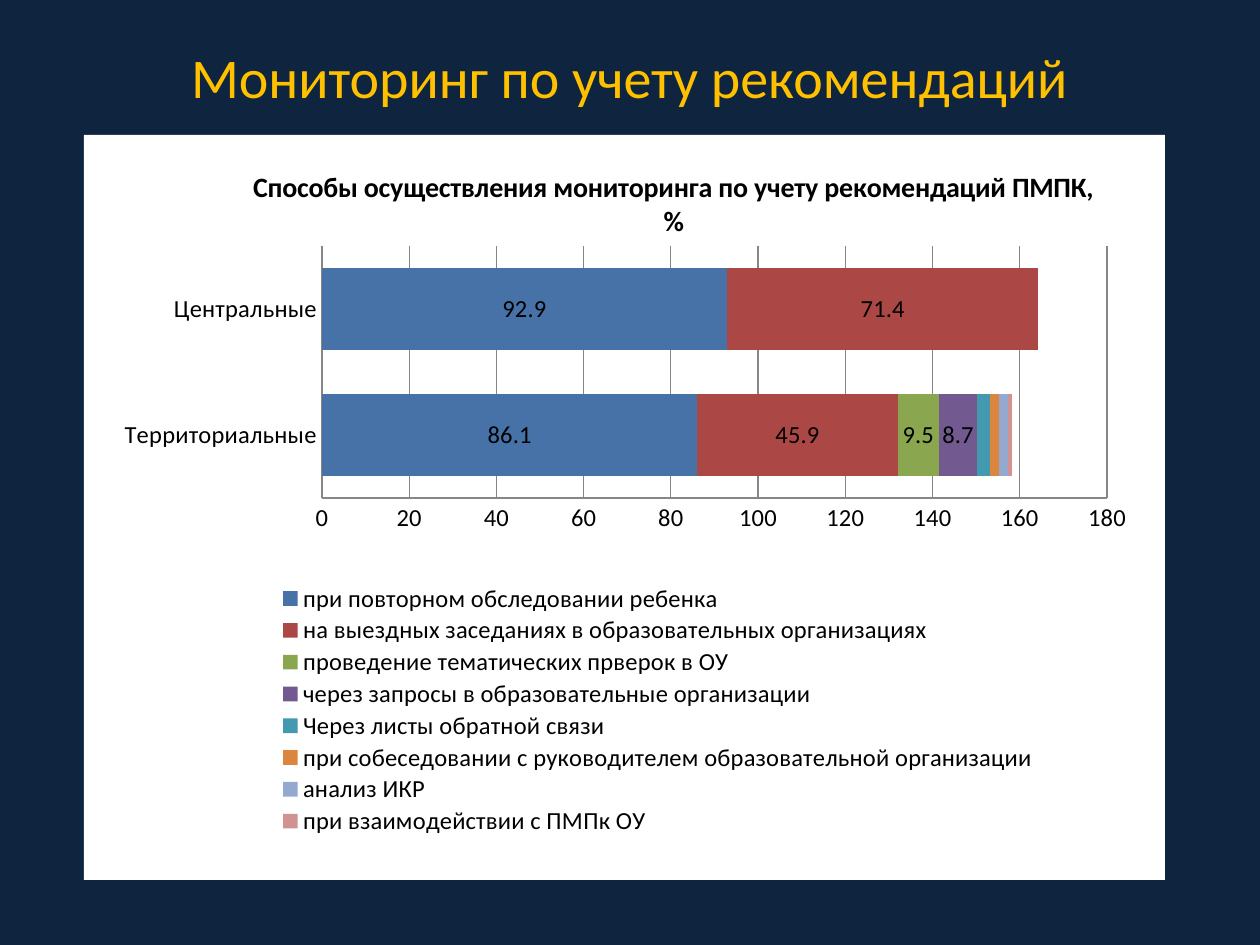
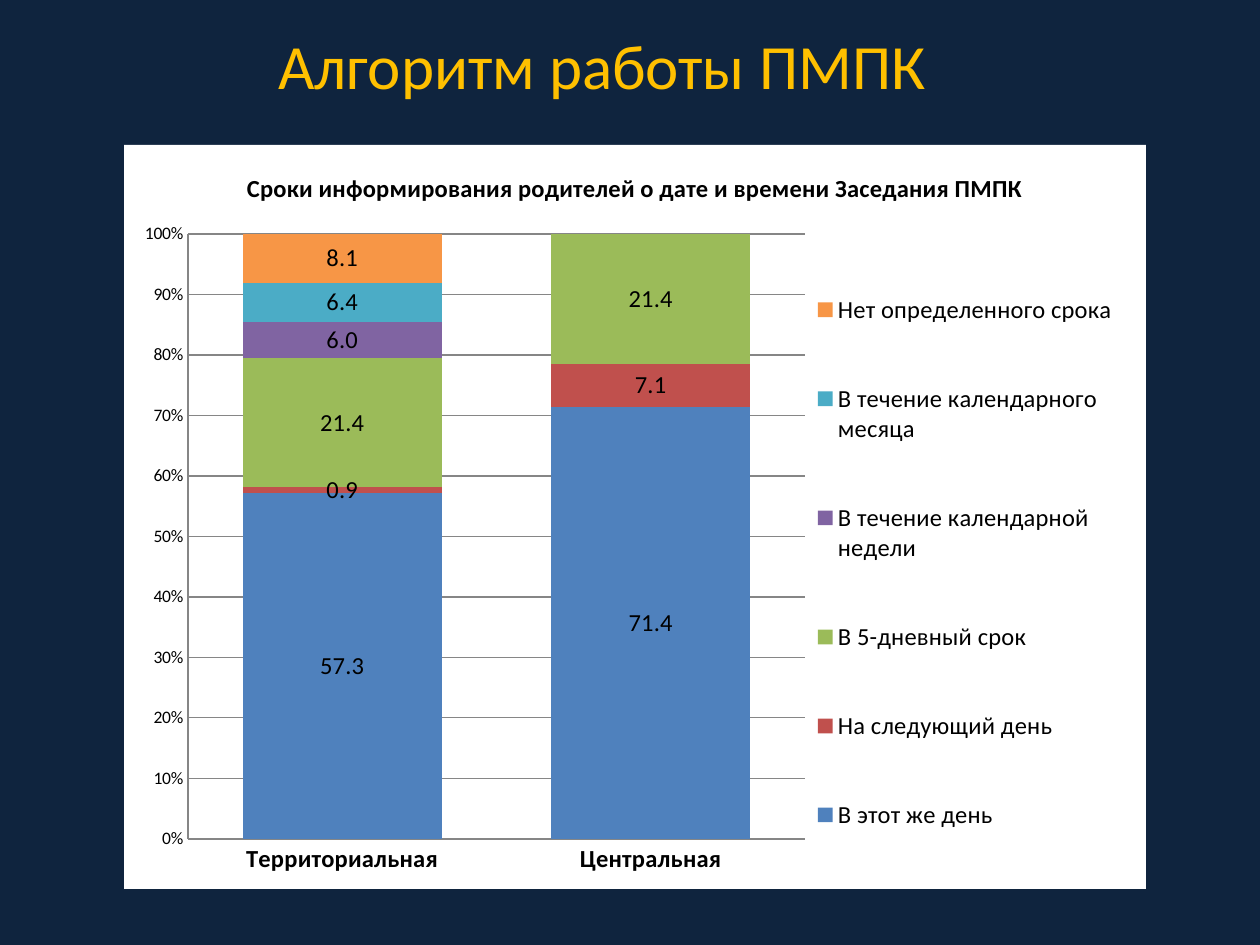
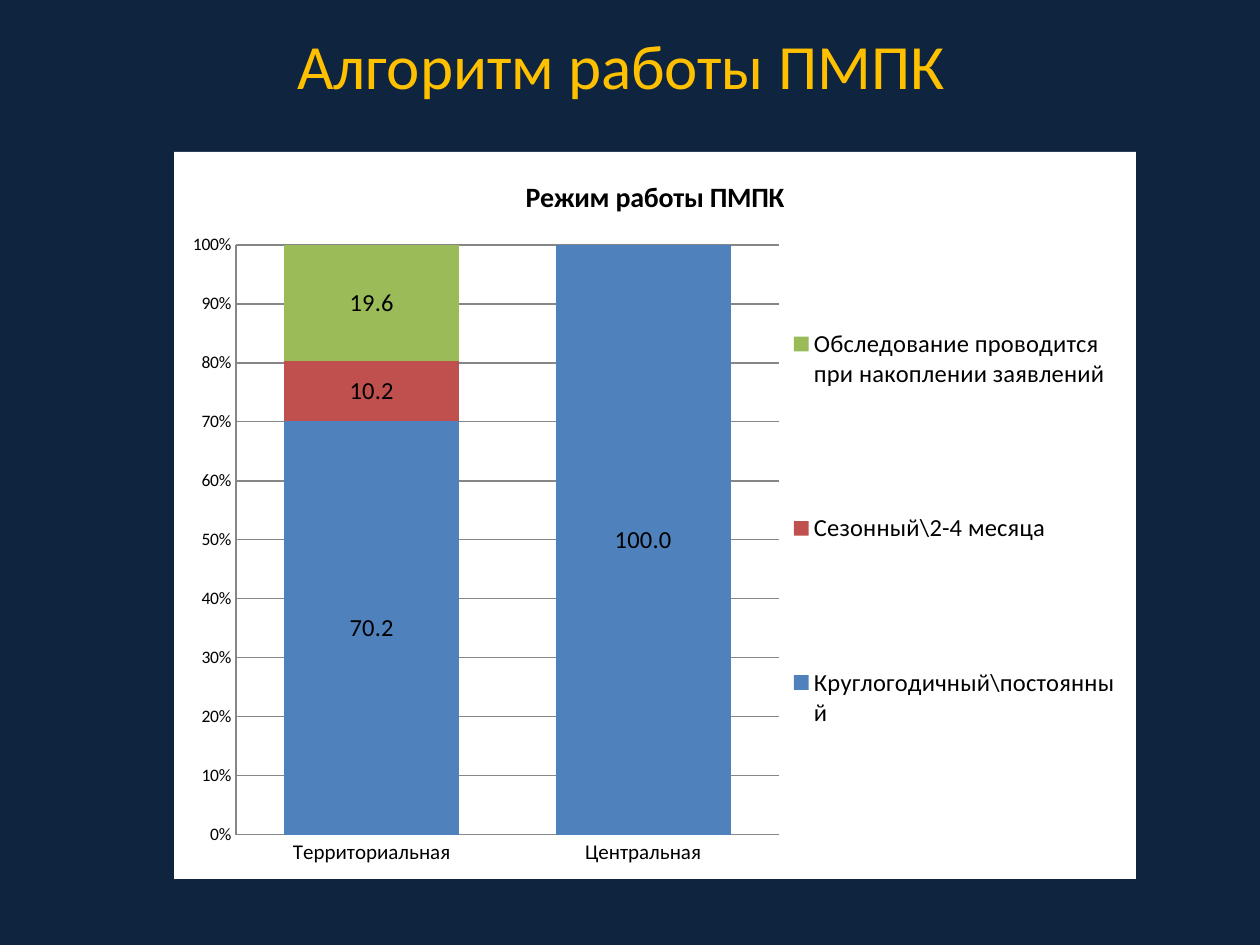
from pptx import Presentation
from pptx import util as u
from pptx.chart.data import CategoryChartData
from pptx.dml.color import RGBColor
from pptx.enum import chart as ch, text
from pptx.oxml import parse_xml
from pptx.oxml.ns import nsdecls, qn

# Shared style
FONT = "Calibri"
NAVY = RGBColor(0x0F, 0x24, 0x3E)
GOLD = RGBColor(0xFF, 0xC0, 0x00)
BLACK = RGBColor(0, 0, 0)
GRAY = RGBColor(0x86, 0x86, 0x86)
BRIGHT = [RGBColor.from_string(c) for c in
          ("4F81BD", "C0504D", "9BBB59", "8064A2", "4BACC6", "F79646")]
MUTED = [RGBColor.from_string(c) for c in
         ("4672A8", "AB4744", "8AA64F", "725990", "4299B0", "DC853E", "93A9CF", "D19392")]
PX_PER_INCH = 126


def px(n):
    return u.Emu(round(n * u.Inches(1) / PX_PER_INCH))


def set_font(font, **fmt):
    values = dict(name=FONT, bold=False) | fmt
    font.color.rgb = values.pop("color", BLACK)
    for key, value in values.items():
        setattr(font, key, value)


class Deck:
    """Holds the style, the presentation and the current slide."""

    def __init__(self):
        self.prs = Presentation()
        self.prs.slide_width, self.prs.slide_height = px(1260), px(945)
        fill = self.prs.slide_master.background.fill
        fill.solid()
        fill.fore_color.rgb = NAVY

    def slide(self, title, left, top, size):
        self.s = self.prs.slides.add_slide(self.prs.slide_layouts[5])
        sp = self.s.shapes.title
        box = dict(left=px(left), top=px(top), width=px(1134), height=px(77))
        for key, value in box.items():
            setattr(sp, key, value)
        tf = sp.text_frame
        tf.text = title
        tf.vertical_anchor = text.MSO_ANCHOR.MIDDLE
        p = tf.paragraphs[0]
        p.alignment = text.PP_ALIGN.CENTER
        set_font(p.runs[0].font, size=u.Pt(size), color=GOLD)

    def chart(self, kind, box, cats, series, colors, title, plot, legend,
              title_size=16, title_at=None, sizes=(14, 14), cat_bold=False,
              value_format="0%", label_format="0.0", labelled=None):
        data = CategoryChartData()
        data.categories = cats
        for name, values in series:
            data.add_series(name, values)
        chart = self.s.shapes.add_chart(kind, *map(px, box), data).chart
        set_font(chart.font, size=u.Pt(sizes[0]))

        # Title and legend
        chart.has_title = chart.has_legend = True
        tf = chart.chart_title.text_frame
        tf.text = title
        set_font(tf.paragraphs[0].runs[0].font, size=u.Pt(title_size), bold=True)
        chart.legend.position = ch.XL_LEGEND_POSITION.RIGHT
        chart.legend.include_in_layout = False
        set_font(chart.legend.font, size=u.Pt(14))

        # Axes
        for axis in (chart.category_axis, chart.value_axis):
            axis.major_tick_mark = axis.minor_tick_mark = ch.XL_TICK_MARK.NONE
            axis.format.line.color.rgb = GRAY
        set_font(chart.category_axis.tick_labels.font, size=u.Pt(sizes[1]), bold=cat_bold)
        va = chart.value_axis
        va.major_gridlines.format.line.color.rgb = GRAY
        va.tick_labels.number_format = value_format
        va.tick_labels.number_format_is_linked = False

        # Series and value labels
        bars = chart.plots[0]
        bars.gap_width, bars.overlap, bars.vary_by_categories = 55, 100, False
        for i, (ser, color) in enumerate(zip(bars.series, colors)):
            ser.format.fill.solid()
            ser.format.fill.fore_color.rgb = color
            if labelled is None or i < labelled:
                self.labels(ser, label_format)

        # Panel and placement
        cs = chart.element
        cs.find(qn("c:chart")).addnext(parse_xml(
            f'<c:spPr {nsdecls("c", "a")}><a:solidFill><a:srgbClr val="FFFFFF"/></a:solidFill>'
            '<a:ln><a:noFill/></a:ln></c:spPr>'))
        self.place(cs, "plotArea", 0, box, plot)
        self.place(cs, "legend", 1, box, legend)
        if title_at:
            self.place(cs, "title", 1, box, title_at)

    def labels(self, ser, number_format):
        dl = ser.data_labels
        dl.show_value = True
        dl.number_format = number_format
        dl.number_format_is_linked = False
        set_font(dl.font, size=u.Pt(14))
        # Zero values carry no label
        zeros = [i for i, v in enumerate(ser.values) if v == 0]
        d_lbls = ser._element.find(qn("c:dLbls"))
        for n, i in enumerate(zeros):
            d_lbls.insert(n, parse_xml(
                f'<c:dLbl {nsdecls("c")}><c:idx val="{i}"/><c:delete val="1"/></c:dLbl>'))

    def place(self, cs, tag, index, box, area):
        """Place a chart part by its slide area in px."""
        el = cs.find(".//" + qn("c:" + tag))
        for old in el.findall(qn("c:layout")):
            el.remove(old)
        parts = ["<c:layoutTarget val='inner'/>"] if tag == "plotArea" else []
        parts += [f"<c:{k}Mode val='edge'/>" for k in "xy"]
        shares = [(area[i] - (box[i] if i < 2 else 0)) / box[i % 2 + 2]
                  for i in range(len(area))]
        parts += [f"<c:{k} val='{v:.4f}'/>" for k, v in zip("xywh", shares)]
        el.insert(index, parse_xml(
            f'<c:layout {nsdecls("c")}><c:manualLayout>{"".join(parts)}'
            '</c:manualLayout></c:layout>'))


def main():
    deck = Deck()
    column = dict(kind=ch.XL_CHART_TYPE.COLUMN_STACKED_100, colors=BRIGHT,
                  cats=["Территориальная", "Центральная"])

    # Slide 1: ways of monitoring
    deck.slide("Мониторинг по учету рекомендаций", 63, 38, 32)
    deck.chart(
        ch.XL_CHART_TYPE.BAR_STACKED, (84, 135, 1081, 745),
        ["Территориальные", "Центральные"],
        [("при повторном обследовании ребенка", (86.1, 92.9)),
         ("на выездных заседаниях в образовательных организациях", (45.9, 71.4)),
         ("проведение тематических прверок в ОУ", (9.5, 0)),
         ("через запросы в образовательные организации", (8.7, 0)),
         ("Через листы обратной связи", (3, 0)),
         ("при собеседовании с руководителем образовательной организации", (2, 0)),
         ("анализ ИКР", (2, 0)),
         ("при взаимодействии с ПМПк ОУ", (1, 0))],
        MUTED, "Способы осуществления мониторинга по учету рекомендаций ПМПК, %",
        plot=(322, 246, 785, 252), legend=(268, 582, 780, 256), title_at=(248, 163),
        value_format="General", label_format="General", labelled=4)

    # Slide 2: notice given to parents
    deck.slide("Алгоритм работы ПМПК", 35, 26, 36)
    deck.chart(
        box=(124, 145, 1022, 744),
        series=[("В этот же день", (57.3, 71.4)),
                ("На следующий день", (0.9, 7.1)),
                ("В 5-дневный срок", (21.4, 21.4)),
                ("В течение календарной недели", (6, 0)),
                ("В течение календарного месяца", (6.4, 0)),
                ("Нет определенного срока", (8.1, 0))],
        title="Сроки информирования родителей о дате и времени Заседания ПМПК",
        plot=(188, 234, 617, 605), legend=(805, 236, 320, 653),
        title_size=14, sizes=(10, 14), cat_bold=True, **column)

    # Slide 3: working schedule
    deck.slide("Алгоритм работы ПМПК", 54, 26, 36)
    deck.chart(
        box=(174, 152, 962, 727),
        series=[("Круглогодичный\\постоянный", (70.2, 100)),
                ("Сезонный\\2-4 месяца", (10.2, 0)),
                ("Обследование проводится при накоплении заявлений", (19.6, 0))],
        title="Режим работы ПМПК",
        plot=(236, 245, 543, 590), legend=(792, 205, 325, 647),
        sizes=(10, 12), **column)

    deck.prs.save("out.pptx")


if __name__ == "__main__":
    main()
